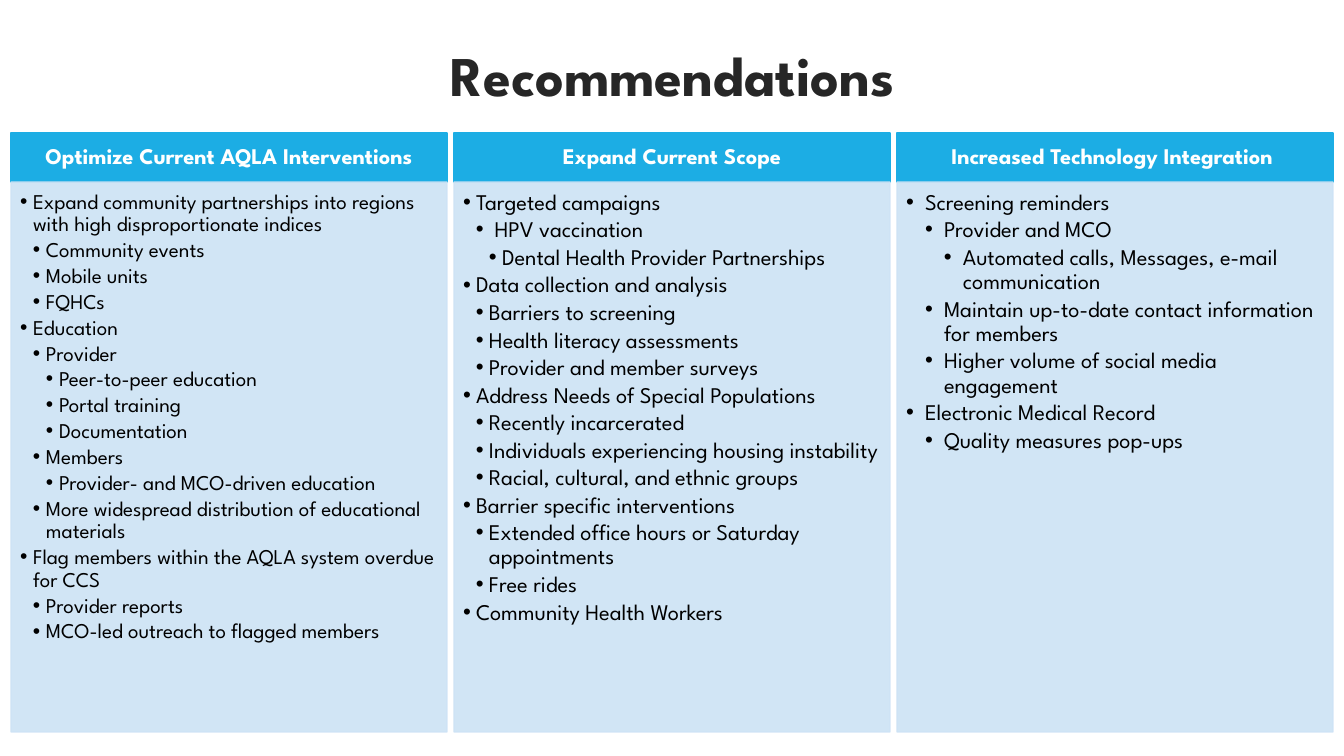
from pptx import Presentation
from pptx.dml.color import RGBColor
from pptx.enum.shapes import MSO_SHAPE
from pptx.enum.text import MSO_ANCHOR, PP_ALIGN
from pptx.oxml.ns import qn
from pptx.util import Emu, Pt
from lxml import etree

RECT = MSO_SHAPE.RECTANGLE
TOP, MIDDLE = MSO_ANCHOR.TOP, MSO_ANCHOR.MIDDLE
LEFT, CENTER = PP_ALIGN.LEFT, PP_ALIGN.CENTER

FONT = "League Spartan"
BLUE = RGBColor(0x1C, 0xAD, 0xE4)
PALE = RGBColor(0xCD, 0xE3, 0xF5)
DARK = RGBColor(0x26, 0x26, 0x26)
BLACK = RGBColor(0, 0, 0)
WHITE = RGBColor(255, 255, 255)

HEADER_H = 49

# Each column: heading, text size, indent step in px, (level, text) items
COLUMNS = [
    ("Optimize Current AQLA Interventions", 15, 13, [
        (1, "Expand community partnerships into regions with high disproportionate indices"),
        (2, "Community events"),
        (2, "Mobile units"),
        (2, "FQHCs"),
        (1, "Education"),
        (2, "Provider"),
        (3, "Peer-to-peer education"),
        (3, "Portal training"),
        (3, "Documentation"),
        (2, "Members"),
        (3, "Provider- and MCO-driven education"),
        (2, "More widespread distribution of educational materials"),
        (1, "Flag members within the AQLA system overdue for CCS"),
        (2, "Provider reports"),
        (2, "MCO-led outreach to flagged members"),
    ]),
    ("Expand Current Scope", 16, 13, [
        (1, "Targeted campaigns"),
        (2, " HPV vaccination"),
        (3, "Dental Health Provider Partnerships"),
        (1, "Data collection and analysis"),
        (2, "Barriers to screening"),
        (2, "Health literacy assessments"),
        (2, "Provider and member surveys"),
        (1, "Address Needs of Special Populations"),
        (2, "Recently incarcerated"),
        (2, "Individuals experiencing housing instability"),
        (2, "Racial, cultural, and ethnic groups"),
        (1, "Barrier specific interventions"),
        (2, "Extended office hours or Saturday appointments"),
        (2, "Free rides"),
        (1, "Community Health Workers"),
    ]),
    ("Increased Technology Integration ", 16, 19, [
        (1, "Screening reminders"),
        (2, "Provider and MCO"),
        (3, "Automated calls, Messages, e-mail communication"),
        (2, "Maintain up-to-date contact information for members"),
        (2, "Higher volume of social media engagement"),
        (1, "Electronic Medical Record"),
        (2, "Quality measures pop-ups"),
    ]),
]


def px(n):
    return Emu(round(n * 914400 / 100.8))


def set_frame(tf, anchor, insets):
    tf.word_wrap = True
    tf.vertical_anchor = anchor
    (tf.margin_left, tf.margin_top,
     tf.margin_right, tf.margin_bottom) = [px(n) for n in insets]


def write(p, text, size, color, align, bold=False):
    p.text = text
    p.alignment = align
    p.line_spacing = 0.9
    font = p.runs[0].font
    font.name, font.size, font.bold = FONT, Pt(size), bold
    font.color.rgb = color


def add_bullet(p, level, step):
    p.level = level - 1
    pPr = p._p.get_or_add_pPr()
    pPr.set("marL", str(px(step * level)))
    pPr.set("indent", str(-px(step)))
    etree.SubElement(pPr, qn("a:buFont")).set("typeface", "Arial")
    etree.SubElement(pPr, qn("a:buChar")).set("char", "•")


def add_panel(s, x, y, w, h, color, opacity=100):
    sp = s.shapes.add_shape(RECT, px(x), px(y), px(w), px(h))
    sp.shadow.inherit = False
    sp.fill.solid()
    sp.fill.fore_color.rgb = color
    sp.line.color.rgb = color
    sp.line.width = Pt(1)
    if opacity < 100:
        for clr in sp._element.spPr.iter(qn("a:srgbClr")):
            etree.SubElement(clr, qn("a:alpha")).set("val", str(opacity * 1000))
    return sp


def add_title(s, x, y, w, h, text):
    tf = s.shapes.add_textbox(px(x), px(y), px(w), px(h)).text_frame
    set_frame(tf, MIDDLE, (10, 5, 10, 5))
    write(tf.paragraphs[0], text, 40, DARK, CENTER, True)


def add_column(s, x, y, w, h, heading, size, step, items):
    # Heading band
    tf = add_panel(s, x, y, w, HEADER_H, BLUE).text_frame
    set_frame(tf, MIDDLE, (12, 7, 12, 7))
    write(tf.paragraphs[0], heading, 16, WHITE, CENTER, True)

    # Bulleted body
    body = add_panel(s, x, y + HEADER_H, w, h - HEADER_H, PALE, 90)
    tf = body.text_frame
    set_frame(tf, TOP, (9, 9, 11, 13))
    for i, (level, text) in enumerate(items):
        p = tf.add_paragraph() if i else tf.paragraphs[0]
        write(p, text, size, BLACK, LEFT)
        p.space_after = Pt(size * 0.15)
        add_bullet(p, level, step)


def main():
    prs = Presentation()
    prs.slide_width, prs.slide_height = px(1344), px(756)
    s = prs.slides.add_slide(prs.slide_layouts[6])
    add_title(s, 118, 3, 1109, 151, "Recommendations")
    for i, column in enumerate(COLUMNS):
        add_column(s, 11 + 443 * i, 133, 436, 599, *column)
    prs.save("out.pptx")


if __name__ == "__main__":
    main()
